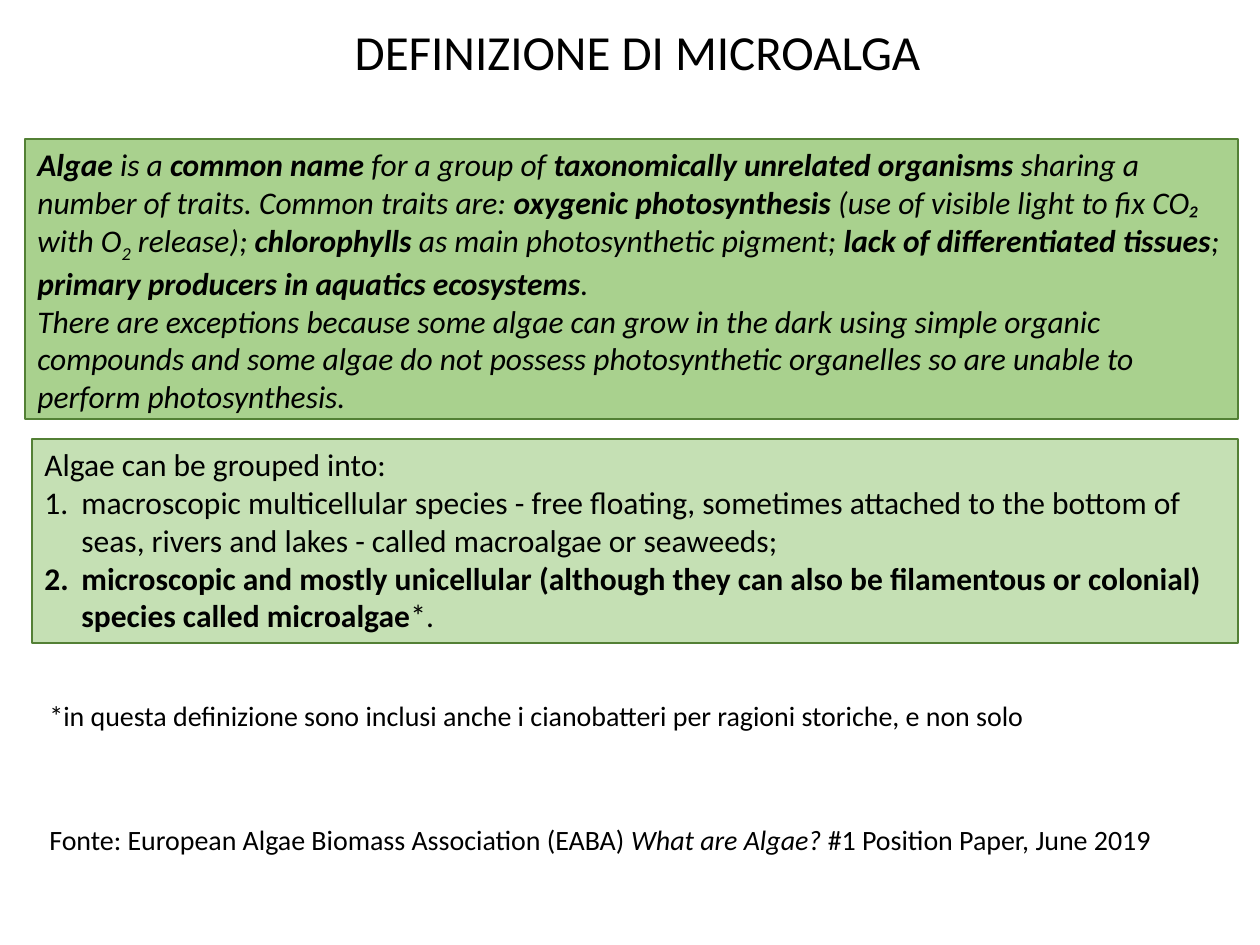
from dataclasses import dataclass

import lxml.etree
import pptx
import pptx.dml.color
import pptx.enum.shapes
import pptx.enum.text
import pptx.oxml.ns
import pptx.util

EMU_PER_PX = 914400 / 126
FONT = "Calibri"
BLACK = "000000"
BORDER_GREEN = "538035"


@dataclass
class Span:
    text: str
    bold: bool = False
    italic: bool = False
    subscript: bool = False


@dataclass
class Line:
    spans: list[Span]
    hanging: int = 0
    numbered: bool = False


@dataclass
class Block:
    left: int
    top: int
    width: int
    height: int
    size: int
    lines: list[Line]
    fill: str | None = None
    wrap: bool = True


def px(value: int) -> int:
    return round(value * EMU_PER_PX)


def color(value: str) -> pptx.dml.color.RGBColor:
    return pptx.dml.color.RGBColor.from_string(value)


def italic_spans(*texts: str) -> list[Span]:
    """Italic spans that alternate between bold and regular, bold first."""
    return [Span(text, bold=index % 2 == 0, italic=True) for index, text in enumerate(texts)]


def format_paragraph(paragraph, line: Line) -> None:
    paragraph.alignment = pptx.enum.text.PP_ALIGN.LEFT
    properties = paragraph._p.get_or_add_pPr()
    if line.hanging:
        properties.set("marL", str(px(line.hanging)))
        properties.set("indent", str(-px(line.hanging)))
    if line.numbered:
        bullet = lxml.etree.SubElement(properties, pptx.oxml.ns.qn("a:buAutoNum"))
        bullet.set("type", "arabicPeriod")


def format_font(font, size: int) -> None:
    font.name = FONT
    font.size = pptx.util.Pt(size)
    font.color.rgb = color(BLACK)


def write_lines(text_frame, lines: list[Line], size: int) -> None:
    for index, line in enumerate(lines):
        paragraph = text_frame.paragraphs[0] if index == 0 else text_frame.add_paragraph()
        format_paragraph(paragraph, line)
        for span in line.spans:
            run = paragraph.add_run()
            run.text = span.text
            format_font(run.font, size)
            run.font.bold = span.bold
            run.font.italic = span.italic
            if span.subscript:
                run._r.get_or_add_rPr().set("baseline", "-25000")


def draw_block(slide, block: Block) -> None:
    place = [px(value) for value in (block.left, block.top, block.width, block.height)]
    if block.fill:
        shape = slide.shapes.add_shape(pptx.enum.shapes.MSO_SHAPE.RECTANGLE, *place)
        shape.shadow.inherit = False
        shape.fill.solid()
        shape.fill.fore_color.rgb = color(block.fill)
        shape.line.color.rgb = color(BORDER_GREEN)
        shape.line.width = pptx.util.Pt(1)
    else:
        shape = slide.shapes.add_textbox(*place)
    text_frame = shape.text_frame
    text_frame.word_wrap = block.wrap
    text_frame.auto_size = pptx.enum.text.MSO_AUTO_SIZE.SHAPE_TO_FIT_TEXT
    text_frame.vertical_anchor = pptx.enum.text.MSO_ANCHOR.TOP
    write_lines(text_frame, block.lines, block.size)


def draw_title(slide, text: str) -> None:
    title = slide.shapes.title
    title.left, title.top, title.width, title.height = px(58), px(15), px(1159), px(72)
    text_frame = title.text_frame
    text_frame.text = text
    text_frame.word_wrap = True
    text_frame.auto_size = pptx.enum.text.MSO_AUTO_SIZE.SHAPE_TO_FIT_TEXT
    text_frame.vertical_anchor = pptx.enum.text.MSO_ANCHOR.TOP
    paragraph = text_frame.paragraphs[0]
    paragraph.alignment = pptx.enum.text.PP_ALIGN.CENTER
    format_font(paragraph.runs[0].font, 28)


# Green boxes: the groups of algae and their definition
GROUPS = Block(32, 439, 1206, 204, 18, fill="C5E0B4", lines=[
    Line([Span("Algae can be grouped into:")]),
    Line([Span("macroscopic multicellular species - free floating, sometimes attached "
               "to the bottom of seas, rivers and lakes - called macroalgae or seaweeds;")],
         hanging=37, numbered=True),
    Line([Span("microscopic and mostly unicellular (although they can also be filamentous "
               "or colonial) species called microalgae", bold=True), Span("*.")],
         hanging=37, numbered=True),
])
DEFINITION = Block(25, 139, 1213, 280, 18, fill="A9D18E", lines=[
    Line([
        *italic_spans(
            "Algae", " is a ", "common name ", "for a group of ",
            "taxonomically unrelated organisms ",
            "sharing a number of traits. Common traits are: ",
            "oxygenic photosynthesis ", "(use of visible light to fix CO₂ with O"),
        Span("2", italic=True, subscript=True),
        Span(" release); ", italic=True),
        *italic_spans(
            "chlorophylls", " as main photosynthetic pigment; ",
            "lack of differentiated tissues", "; ",
            "primary producers in aquatics ecosystems", "."),
    ]),
    Line([Span("There are exceptions because some algae can grow in the dark using simple "
               "organic compounds and some algae do not possess photosynthetic organelles "
               "so are unable to perform photosynthesis.", italic=True)]),
])

# Source and footnote
SOURCE = Block(37, 816, 1144, 47, 16, wrap=False, lines=[
    Line([Span("Fonte: European Algae Biomass Association (EABA) "),
          Span("What are Algae?", italic=True),
          Span(" #1 Position Paper, June 2019")]),
])
FOOTNOTE = Block(37, 692, 1114, 47, 16, lines=[
    Line([Span("*in questa definizione sono inclusi anche i cianobatteri "
               "per ragioni storiche, e non solo")], hanging=13),
])


def main() -> None:
    presentation = pptx.Presentation()
    presentation.slide_width = px(1260)
    presentation.slide_height = px(945)
    slide = presentation.slides.add_slide(presentation.slide_layouts[5])
    draw_title(slide, "DEFINIZIONE DI MICROALGA")
    for block in (GROUPS, DEFINITION, SOURCE, FOOTNOTE):
        draw_block(slide, block)
    presentation.save("out.pptx")


if __name__ == "__main__":
    main()
